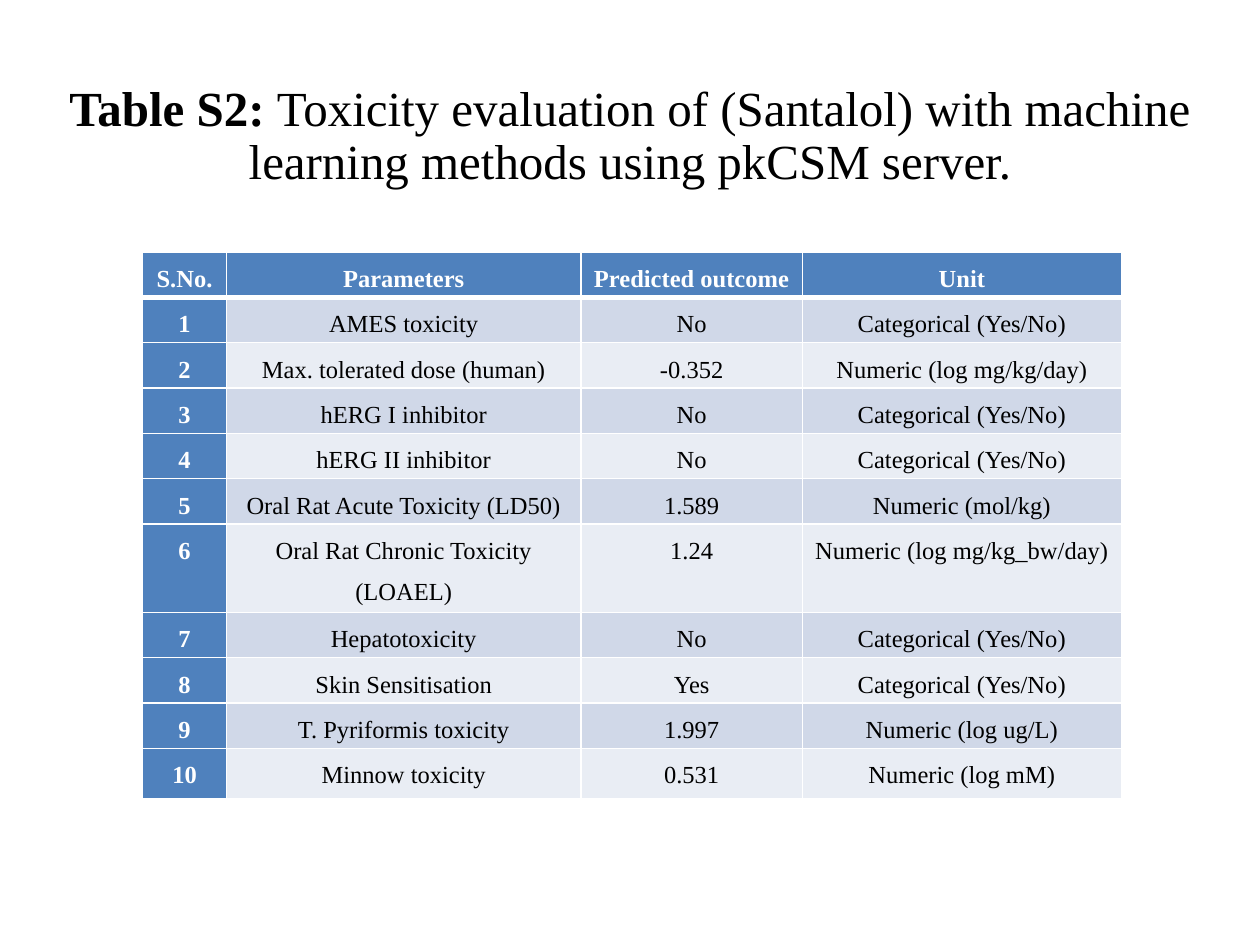
from lxml import etree
from pptx import Presentation
from pptx import util as u
from pptx.dml.color import RGBColor
from pptx.enum import text
from pptx.oxml import ns

BLACK = RGBColor(0x00, 0x00, 0x00)
WHITE = RGBColor(0xFF, 0xFF, 0xFF)
BLUE = RGBColor(0x4F, 0x81, 0xBD)
BAND_DARK = RGBColor(0xD0, 0xD8, 0xE8)
BAND_LIGHT = RGBColor(0xE9, 0xED, 0xF4)

TITLE = ("Table S2: ", "Toxicity evaluation of (Santalol) with machine learning methods using pkCSM server.")
HEADER = ("S.No.", "Parameters", "Predicted outcome", "Unit")
CATEGORICAL = "Categorical (Yes/No)"
RESULTS = [
    ("AMES toxicity", "No", CATEGORICAL),
    ("Max. tolerated dose (human)", "-0.352", "Numeric (log mg/kg/day)"),
    ("hERG I inhibitor", "No", CATEGORICAL),
    ("hERG II inhibitor", "No", CATEGORICAL),
    ("Oral Rat Acute Toxicity (LD50)", "1.589", "Numeric (mol/kg)"),
    ("Oral Rat Chronic Toxicity (LOAEL)", "1.24", "Numeric (log mg/kg_bw/day)"),
    ("Hepatotoxicity", "No", CATEGORICAL),
    ("Skin Sensitisation", "Yes", CATEGORICAL),
    ("T. Pyriformis toxicity", "1.997", "Numeric (log ug/L)"),
    ("Minnow toxicity", "0.531", "Numeric (log mM)"),
]
COLUMN_WIDTHS = (0.67, 2.81, 1.76, 2.53)
ROW_HEIGHTS = [0.36] * 6 + [0.7] + [0.36] * 3 + [0.4]


class SlideBuilder:
    font_name = "Times New Roman"
    title_size = u.Pt(28)
    table_size = u.Pt(14)

    def __init__(self, slide):
        self.slide = slide

    def style_font(self, font, size, color, bold):
        font.name = self.font_name
        font.size = size
        font.color.rgb = color
        font.bold = bold

    def add_title(self, label, wording, left, top, width, height):
        """Add a centred title whose label is bold."""
        frame = self.slide.shapes.add_textbox(left, top, width, height).text_frame
        frame.word_wrap = True
        frame.vertical_anchor = text.MSO_ANCHOR.BOTTOM
        paragraph = frame.paragraphs[0]
        paragraph.alignment = text.PP_ALIGN.CENTER
        paragraph.line_spacing = 0.9
        paragraph.space_after = u.Pt(6)
        for part, bold in ((label, True), (wording, False)):
            run = paragraph.add_run()
            run.text = part
            self.style_font(run.font, self.title_size, BLACK, bold)

    def add_table(self, rows, left, top, column_widths, row_heights):
        """Add a table with a blue header row and first column, and banded rows."""
        table = self.slide.shapes.add_table(
            len(rows), len(column_widths), left, top,
            u.Inches(sum(column_widths)), u.Inches(sum(row_heights))).table
        for column, width in zip(table.columns, column_widths):
            column.width = u.Inches(width)
        for row, height in zip(table.rows, row_heights):
            row.height = u.Inches(height)
        for row_index, values in enumerate(rows):
            band = BAND_DARK if row_index % 2 else BAND_LIGHT
            for column_index, value in enumerate(values):
                cell = table.cell(row_index, column_index)
                self.add_borders(cell, top=3 if row_index == 1 else 1,
                                 bottom=3 if row_index == 0 else 1)
                heading = row_index == 0 or column_index == 0
                self.fill_cell(cell, value, BLUE if heading else band, heading)

    def add_borders(self, cell, top, bottom):
        properties = cell._tc.get_or_add_tcPr()
        for tag, points in (("a:lnL", 1), ("a:lnR", 1), ("a:lnT", top), ("a:lnB", bottom)):
            line = etree.SubElement(properties, ns.qn(tag), w=str(u.Pt(points)))
            fill = etree.SubElement(line, ns.qn("a:solidFill"))
            etree.SubElement(fill, ns.qn("a:srgbClr"), val=str(WHITE))

    def fill_cell(self, cell, value, fill_color, heading):
        cell.fill.solid()
        cell.fill.fore_color.rgb = fill_color
        cell.margin_left = cell.margin_right = u.Inches(0.05)
        cell.margin_top = cell.margin_bottom = 0
        cell.text_frame.text = value
        paragraph = cell.text_frame.paragraphs[0]
        paragraph.alignment = text.PP_ALIGN.CENTER
        paragraph.line_spacing = 1.5
        paragraph.space_after = u.Pt(6)
        self.style_font(paragraph.runs[0].font, self.table_size,
                        WHITE if heading else BLACK, heading)


def main():
    presentation = Presentation()
    presentation.slide_width = u.Inches(10)
    presentation.slide_height = u.Inches(7.5)
    builder = SlideBuilder(presentation.slides.add_slide(presentation.slide_layouts[6]))
    builder.add_title(*TITLE, u.Inches(0.43), u.Inches(0.54), u.Inches(9.14), u.Inches(1.02))
    rows = [HEADER] + [(str(number), *result) for number, result in enumerate(RESULTS, 1)]
    builder.add_table(rows, u.Inches(1.13), u.Inches(2), COLUMN_WIDTHS, ROW_HEIGHTS)
    presentation.save("out.pptx")


if __name__ == "__main__":
    main()
